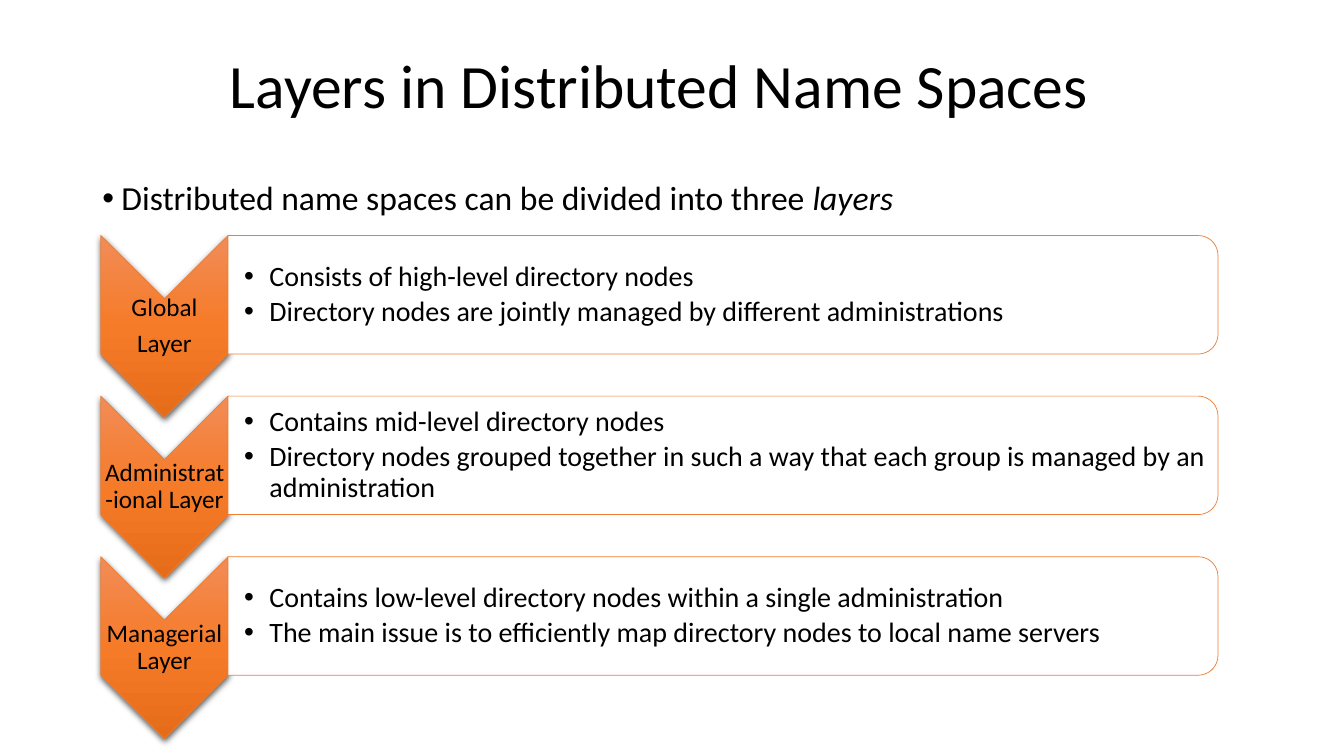
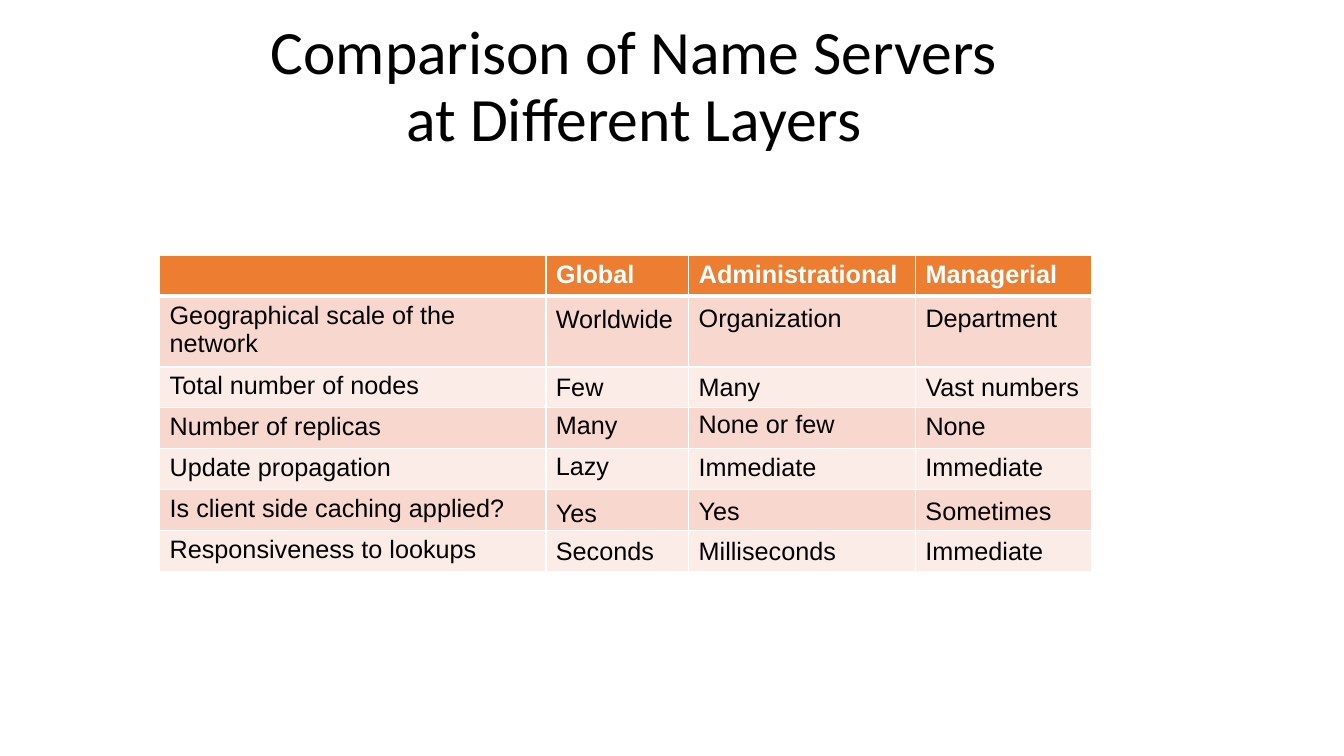
import copy
import math

import lxml.etree
import pptx
import pptx.dml.color
import pptx.enum.text
import pptx.oxml.ns
import pptx.util

# Shared look: the slide is a grid of 160 columns by 90 rows
UNIT = pptx.util.Pt(6)
BLACK, WHITE, ORANGE = "000000", "FFFFFF", "ED7D31"
CHEVRON_SHADES = [(0, "F18C57"), (0.5, "F67B28"), (1, "E56C19")]
BANDS = ["F8D7CE", "FCECE8"]
TOP = pptx.enum.text.MSO_ANCHOR.TOP
MIDDLE = pptx.enum.text.MSO_ANCHOR.MIDDLE
TITLE_STYLE = dict(size=44, align="CENTER", spacing=0.9)
qn = pptx.oxml.ns.qn


def rgb(hex_code):
    return pptx.dml.color.RGBColor.from_string(hex_code)


def write(frame, *lines, size=18, font="Calibri", color=BLACK, bold=False,
          align="LEFT", spacing=1.0, after=0, indent=0, italic_tail="",
          anchor=MIDDLE, insets=(0.1, 0.05, 0.1, 0.05)):
    """Fill a text frame with one paragraph per line; indent adds bullets."""
    frame.word_wrap = True
    frame.vertical_anchor = anchor
    (frame.margin_left, frame.margin_top, frame.margin_right,
     frame.margin_bottom) = [pptx.util.Inches(inset) for inset in insets]
    for number, line in enumerate(lines):
        paragraph = frame.add_paragraph() if number else frame.paragraphs[0]
        paragraph.text = line
        if italic_tail:
            tail = paragraph.add_run()
            tail.text = italic_tail
            tail.font.italic = True
        paragraph.alignment = getattr(pptx.enum.text.PP_ALIGN, align)
        paragraph.line_spacing = spacing
        paragraph.space_after = pptx.util.Pt(after)
        if indent:
            properties = paragraph._p.get_or_add_pPr()
            properties.set("marL", str(pptx.util.Inches(indent)))
            properties.set("indent", str(-pptx.util.Inches(indent)))
            lxml.etree.SubElement(properties, qn("a:buFont"), typeface="Arial")
            lxml.etree.SubElement(properties, qn("a:buChar"), char="•")
        for run in paragraph.runs:
            run.font.size = pptx.util.Pt(size)
            run.font.name = font
            run.font.bold = bold
            run.font.color.rgb = rgb(color)


deck = pptx.Presentation()
deck.slide_width, deck.slide_height = 160 * UNIT, 90 * UNIT
layers, comparison = [deck.slides.add_slide(deck.slide_layouts[6]) for _ in range(2)]

# Titles and the opening bullet: left, top, width, height in grid units
for slide, area, line, style in [
    (layers, (23, 3.6, 111, 13.8), "Layers in Distributed Name Spaces", TITLE_STYLE),
    (layers, (11, 21, 114, 59.4), "Distributed name spaces can be divided into three ",
     dict(size=24, spacing=0.9, indent=0.19, italic_tail="layers", anchor=TOP)),
    (comparison, (12, 3.6, 127, 13.8),
     "Comparison of Name Servers\nat Different Layers", TITLE_STYLE),
]:
    box = slide.shapes.add_textbox(*[int(length * UNIT) for length in area])
    write(box.text_frame, line, **style)

# Layer rows: a chevron with the layer's name and a panel with its points
LEFT, SPLIT, RIGHT = 12, 27.15, 145
FIRST_TOP, PITCH, PANEL_HEIGHT, TIP, CORNER = 28.04, 19.12, 14.1, 7.57, 2.35
middle = (LEFT + SPLIT) / 2
layer_rows = [
    (["Global", "Layer"],
     ["Consists of high-level directory nodes",
      "Directory nodes are jointly managed by different administrations"]),
    (["Administrat-ional Layer"],
     ["Contains mid-level directory nodes",
      "Directory nodes grouped together in such a way that each group is "
      "managed by an administration"]),
    (["Managerial Layer"],
     ["Contains low-level directory nodes within a single administration",
      "The main issue is to efficiently map directory nodes to local name servers"]),
]
for row, (layer_name, points) in enumerate(layer_rows):
    top = FIRST_TOP + row * PITCH
    bottom = top + PANEL_HEIGHT
    chevron_outline = [(LEFT, top), (middle, top + TIP), (SPLIT, top),
                       (SPLIT, bottom), (middle, bottom + TIP), (LEFT, bottom)]
    panel_outline = [(SPLIT, bottom), (SPLIT, top)]
    for center_y, first_angle in [(top + CORNER, -90), (bottom - CORNER, 0)]:
        for angle in range(first_angle, first_angle + 91, 10):
            turn = math.radians(angle)
            panel_outline.append((RIGHT - CORNER + CORNER * math.cos(turn),
                                  center_y + CORNER * math.sin(turn)))
    pair = []
    for outline in (chevron_outline, panel_outline):
        corners = [(int(x * UNIT), int(y * UNIT)) for x, y in outline]
        builder = layers.shapes.build_freeform(*corners[0], scale=1.0)
        builder.add_line_segments(corners[1:], close=True)
        shape = builder.convert_to_shape()
        shape.shadow.inherit = False
        shape.line.color.rgb = rgb(ORANGE)
        shape.line.width = pptx.util.Pt(0.5)
        pair.append(shape)
    chevron, panel = pair

    # Three-stop gradient and soft shadow of the chevron
    chevron.fill.gradient()
    chevron.fill.gradient_angle = 270
    properties = chevron._element.spPr
    stop_list = properties.find(qn("a:gradFill")).find(qn("a:gsLst"))
    stop_list.insert(1, copy.deepcopy(stop_list[0]))
    for stop, (position, shade) in zip(chevron.fill.gradient_stops, CHEVRON_SHADES):
        stop.position = position
        stop.color.rgb = rgb(shade)
    shadow = lxml.etree.SubElement(
        properties.find(qn("a:effectLst")), qn("a:outerShdw"),
        blurRad=str(pptx.util.Pt(4.5)), dist=str(pptx.util.Pt(1.5)),
        dir="5400000", algn="ctr", rotWithShape="0")
    shadow_color = lxml.etree.SubElement(shadow, qn("a:srgbClr"), val=BLACK)
    lxml.etree.SubElement(shadow_color, qn("a:alpha"), val="63000")
    write(chevron.text_frame, *layer_name, align="CENTER", spacing=0.9, after=6.3,
          insets=(0.01, 0.64, 0.01, 0.64))

    panel.fill.solid()
    panel.fill.fore_color.rgb = rgb(WHITE)
    write(panel.text_frame, *points, size=20, spacing=0.9, after=3.3, indent=0.25,
          insets=(0.16, 0.07, 0.07, 0.07))

# Comparison table: headings and row labels
headings = ["", "Global", "Administrational", "Managerial"]
row_labels = ["Geographical scale of the network", "Total number of nodes",
              "Number of replicas", "Update propagation",
              "Is client side caching applied?", "Responsiveness to lookups"]
table_rows = [headings] + [[label, "", "", ""] for label in row_labels]
column_widths = [46, 17, 27, 21]
row_heights = [4.88, 8.3] + [4.88] * 5
table = comparison.shapes.add_table(
    len(table_rows), len(column_widths), 19 * UNIT, int(30.4 * UNIT),
    sum(column_widths) * UNIT, int(sum(row_heights) * UNIT)).table
for column, width in zip(table.columns, column_widths):
    column.width = width * UNIT
for row, (texts, height) in enumerate(zip(table_rows, row_heights)):
    table.rows[row].height = int(height * UNIT)
    header = row == 0
    for column, text in enumerate(texts):
        cell = table.cell(row, column)
        for side in "LRTB":
            thick = (header and side == "B") or (row == 1 and side == "T")
            border = lxml.etree.SubElement(
                cell._tc.get_or_add_tcPr(), qn("a:ln" + side),
                w=str(pptx.util.Pt(3 if thick else 1)))
            border_fill = lxml.etree.SubElement(border, qn("a:solidFill"))
            lxml.etree.SubElement(border_fill, qn("a:srgbClr"), val=WHITE)
        cell.fill.solid()
        cell.fill.fore_color.rgb = rgb(ORANGE if header else BANDS[(row - 1) % 2])
        write(cell.text_frame, text, font="Arial", bold=header,
              color=WHITE if header else BLACK, anchor=TOP)

# Values laid over the table: text, top and width in grid units
VALUE_LEFTS = [65, 82, 109]
server_values = [
    [("Worldwide", 35.5, 17), ("Organization", 35.4, 26), ("Department", 35.4, 20)],
    [("Few", 43.6, 10), ("Many", 43.6, 10), ("Vast numbers", 43.6, 21)],
    [("Many", 48.1, 10), ("None or few", 48, 26), ("None", 48.2, 14)],
    [("Lazy", 53, 9), ("Immediate", 53.1, 26), ("Immediate", 53.1, 19)],
    [("Yes", 58.6, 9), ("Yes", 58.4, 9), ("Sometimes", 58.4, 18)],
    [("Seconds", 63.1, 15), ("Milliseconds", 63.1, 20), ("Immediate", 63.1, 17)],
]
for values in server_values:
    for left, (value, top, width) in zip(VALUE_LEFTS, values):
        box = comparison.shapes.add_textbox(
            left * UNIT, int(top * UNIT), width * UNIT, int(4.85 * UNIT))
        write(box.text_frame, value, font="Arial", anchor=TOP)

deck.save("out.pptx")
